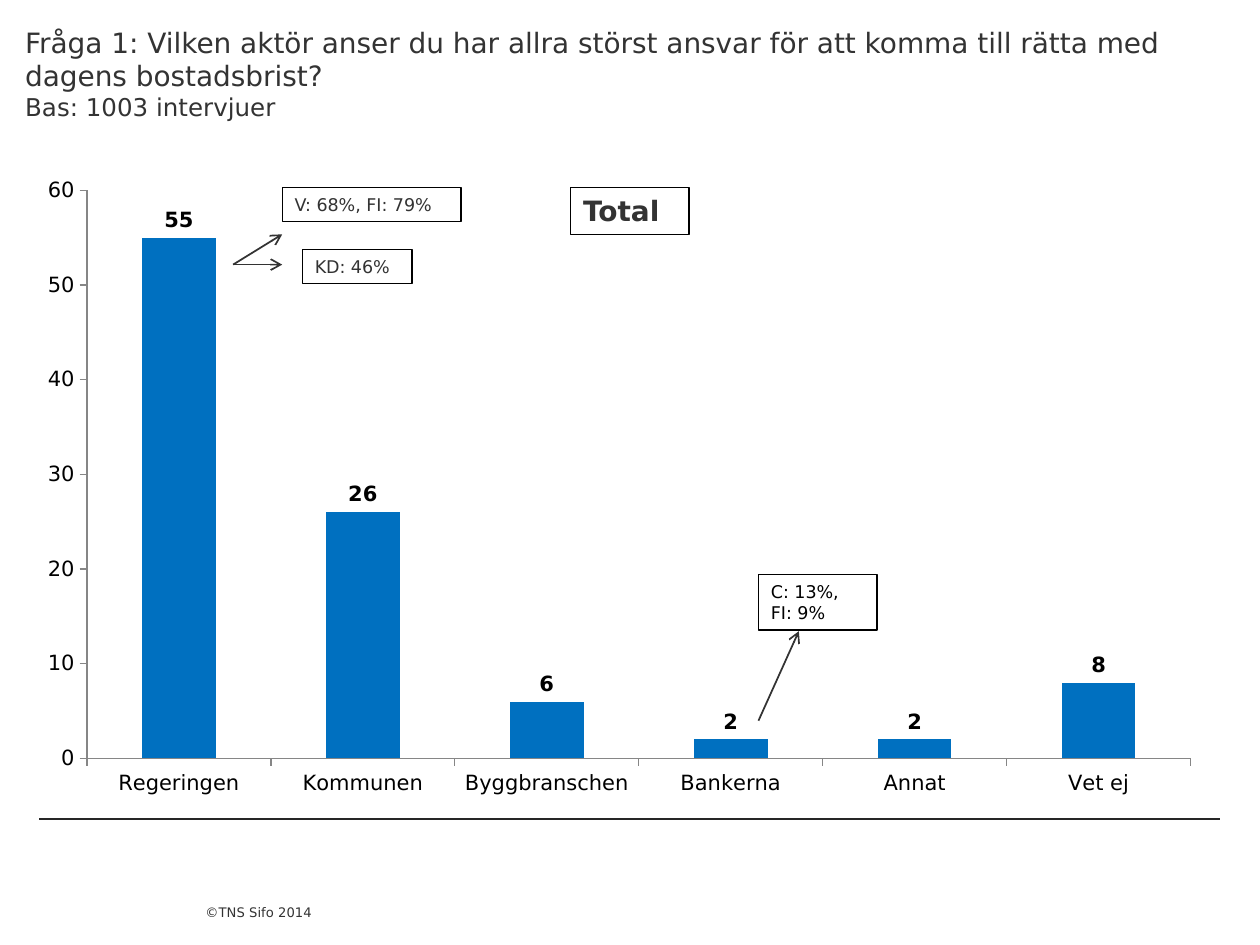
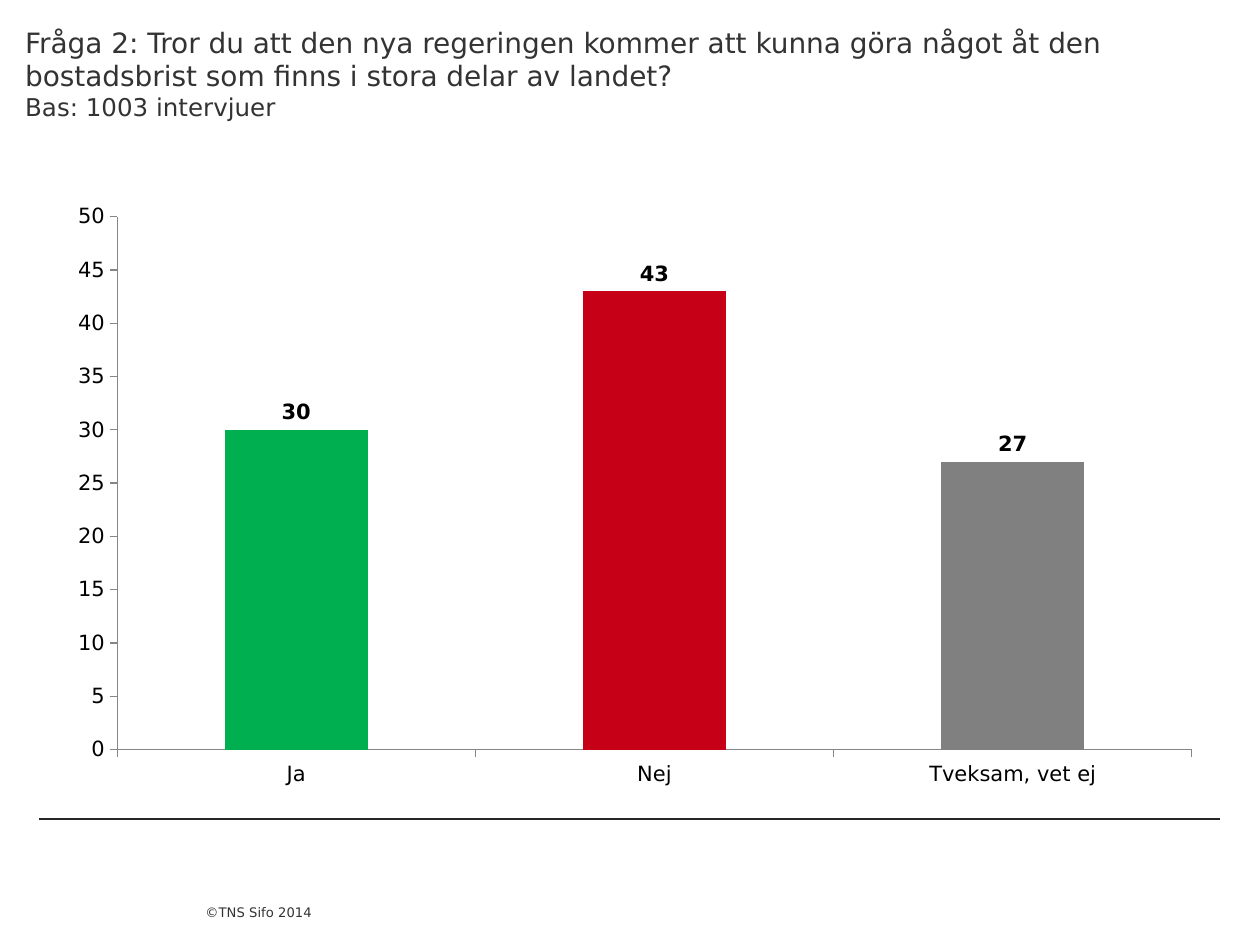
import pptx
import pptx.chart.data
import pptx.dml.color
import pptx.enum.chart
import pptx.enum.shapes
import pptx.enum.text
import pptx.util
from dataclasses import dataclass
from lxml import etree
from pptx.util import Inches, Pt


@dataclass(frozen=True)
class Theme:
    font: str = "DejaVu Sans"
    text: str = "333333"
    black: str = "000000"
    rule: str = "262626"
    axis: str = "868686"
    blue: str = "0070C0"
    red: str = "C50017"
    green: str = "00B050"
    grey: str = "808080"
    title: float = 16
    base: float = 14
    chart: float = 12
    callout: float = 10
    footer: float = 7.5


T = Theme()
BASE = "Bas: 1003 intervjuer"
FOOTER = "©TNS Sifo 2014"

SLIDES = [
    {
        "title": "Fråga 1: Vilken aktör anser du har allra störst ansvar för att "
                 "komma till rätta med dagens bostadsbrist?",
        "answers": [("Regeringen", 55), ("Kommunen", 26), ("Byggbranschen", 6),
                    ("Bankerna", 2), ("Annat", 2), ("Vet ej", 8)],
        "colors": [T.blue] * 6,
        "frame": (0.2, 1.31, 9.45, 5.12),
        "plot": (0.69, 1.51, 8.76, 4.51),
        "axis": (60, 10),
        "callouts": [
            (["Total"], (4.53, 1.49, 0.94, 0.37), T.title, T.text, True),
            (["V: 68%, FI: 79%"], (2.24, 1.49, 1.42, 0.27), T.callout, T.text, False),
            (["KD: 46%"], (2.4, 1.98, 0.87, 0.27), T.callout, T.text, False),
            (["C: 13%,", "FI: 9%"], (6.02, 4.56, 0.94, 0.44), T.callout, T.black, False),
        ],
        "arrows": [(1.85, 2.1, 2.24, 1.86), (1.85, 2.1, 2.24, 2.1),
                   (6.02, 5.72, 6.34, 5.01)],
    },
    {
        "title": "Fråga 2: Tror du att den nya regeringen kommer att kunna göra "
                 "något åt den bostadsbrist som finns i stora delar av landet?",
        "answers": [("Ja", 30), ("Nej", 43), ("Tveksam, vet ej", 27)],
        "colors": [T.green, T.red, T.grey],
        "frame": (0.43, 1.53, 9.21, 4.82),
        "plot": (0.93, 1.72, 8.53, 4.23),
        "axis": (50, 5),
        "callouts": [],
        "arrows": [],
    },
]


def rgb(color):
    return pptx.dml.color.RGBColor.from_string(color)


def set_font(font, size, color, bold=False):
    font.name, font.size, font.bold = T.font, Pt(size), bold
    font.color.rgb = rgb(color)


def add_text(s, box, lines, insets=None):
    sp = s.shapes.add_textbox(*map(Inches, box))
    tf = sp.text_frame
    tf.word_wrap = True
    if insets:
        tf.margin_left, tf.margin_top, tf.margin_right, tf.margin_bottom = map(Inches, insets)
    for i, (text, size, color, bold) in enumerate(lines):
        p = tf.add_paragraph() if i else tf.paragraphs[0]
        p.text = text
        set_font(p.font, size, color, bold)
    return sp


def add_line(s, points, color, width, arrow=False):
    cx = s.shapes.add_connector(pptx.enum.shapes.MSO_CONNECTOR.STRAIGHT,
                                *map(Inches, points))
    cx.line.color.rgb = rgb(color)
    cx.line.width = Pt(width)
    ns = pptx.oxml.ns.qn
    if arrow:
        etree.SubElement(cx.line._get_or_add_ln(), ns("a:tailEnd"), type="arrow")
    etree.SubElement(cx._element.spPr, ns("a:effectLst"))


def place_plot(chart, frame, plot):
    ns = pptx.oxml.ns.qn
    area = chart._chartSpace.chart.plotArea
    for old in area.findall(ns("c:layout")):
        area.remove(old)
    layout = etree.Element(ns("c:layout"))
    area.insert(0, layout)
    manual = etree.SubElement(layout, ns("c:manualLayout"))
    x, y, w, h = frame
    settings = [("layoutTarget", "inner"), ("xMode", "edge"), ("yMode", "edge"),
                ("x", (plot[0] - x) / w), ("y", (plot[1] - y) / h),
                ("w", plot[2] / w), ("h", plot[3] / h)]
    for tag, val in settings:
        etree.SubElement(manual, ns("c:" + tag), val=str(val))


def add_answers(s, slide):
    data = pptx.chart.data.CategoryChartData(number_format="#,##0")
    data.categories = [name for name, _ in slide["answers"]]
    data.add_series("Series 1", [value for _, value in slide["answers"]])
    chart = s.shapes.add_chart(pptx.enum.chart.XL_CHART_TYPE.COLUMN_CLUSTERED,
                               *map(Inches, slide["frame"]), data).chart
    chart.has_legend = chart.has_title = False
    set_font(chart.font, T.chart, T.black)
    place_plot(chart, slide["frame"], slide["plot"])

    top, step = slide["axis"]
    values = chart.value_axis
    values.minimum_scale, values.maximum_scale, values.major_unit = 0, top, step
    for axis in (chart.category_axis, values):
        axis.has_major_gridlines = False
        axis.major_tick_mark = pptx.enum.chart.XL_TICK_MARK.OUTSIDE
        axis.format.line.color.rgb = rgb(T.axis)
        axis.format.line.width = Pt(0.75)
        set_font(axis.tick_labels.font, T.chart, T.black)

    bars = chart.plots[0]
    bars.gap_width = 150
    bars.vary_by_categories = False
    series = bars.series[0]
    series.invert_if_negative = False
    for i, color in enumerate(slide["colors"]):
        fill = series.points[i].format.fill
        fill.solid()
        fill.fore_color.rgb = rgb(color)
    labels = series.data_labels
    labels.show_value = True
    labels.position = pptx.enum.chart.XL_LABEL_POSITION.OUTSIDE_END
    set_font(labels.font, T.chart, T.black, True)


def add_slide(prs, slide):
    s = prs.slides.add_slide(prs.slide_layouts[6])
    add_line(s, (0.31, 6.5, 9.68, 6.5), T.rule, 0.75)
    footer = add_text(s, (1.63, 6.93, 1.15, 0.58),
                      [(FOOTER, T.footer, T.text, False)], (0, 0, 0, 0.29))
    footer.text_frame.vertical_anchor = pptx.enum.text.MSO_ANCHOR.BOTTOM
    add_text(s, (0.2, -0.03, 9.76, 1.77),
             [(slide["title"], T.title, T.text, False),
              (BASE, T.base, T.text, False)], (0, 0.23, 0, 0))
    add_answers(s, slide)
    for lines, box, size, color, bold in slide["callouts"]:
        sp = add_text(s, box, [(line, size, color, bold) for line in lines])
        sp.line.color.rgb = rgb(T.black)
        sp.line.width = Pt(0.75)
    for points in slide["arrows"]:
        add_line(s, points, T.text, 1, arrow=True)


def main():
    prs = pptx.Presentation()
    prs.slide_width, prs.slide_height = Inches(10), Inches(7.5)
    for slide in SLIDES:
        add_slide(prs, slide)
    prs.save("out.pptx")


if __name__ == "__main__":
    main()
